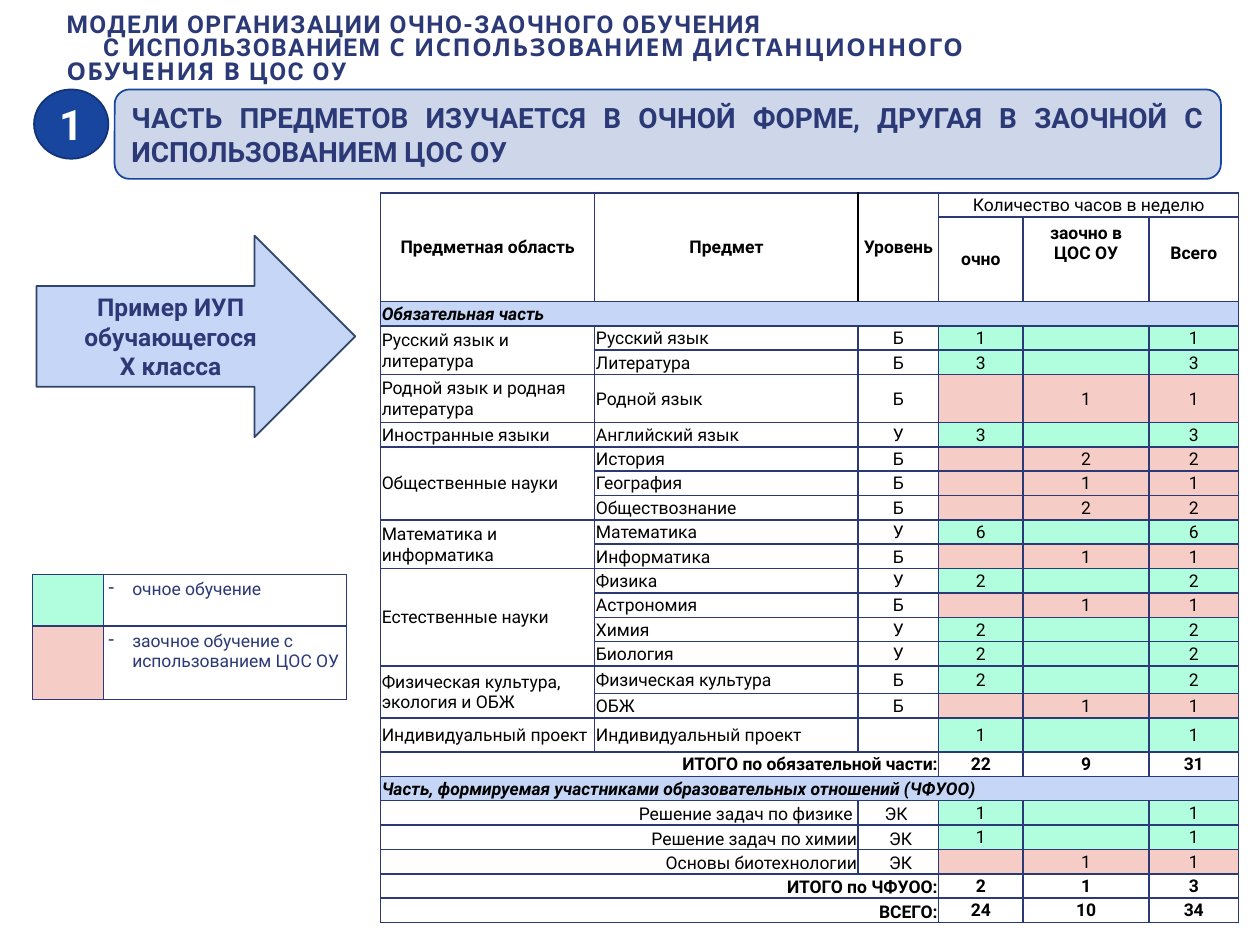
"""Build a slide with a sample curriculum for mixed full-time and distance study."""
from lxml.etree import SubElement
from pptx import Presentation
from pptx.dml.color import RGBColor
from pptx.enum.shapes import MSO_SHAPE as Shape
from pptx.enum.text import MSO_ANCHOR as Anchor, PP_ALIGN as Align
from pptx.oxml.ns import qn
from pptx.util import Inches, Pt

HUES = {"ink": "2B3977", "black": "000000", "white": "FFFFFF", "blue": "18459E",
        "edge": "123375", "pale": "CED7E9", "sky": "C6D6F6", "slate": "30446B",
        "full": "B0FEDE", "dist": "F6CDC6"}
LEFT, MID, RIGHT = Align.LEFT, Align.CENTER, Align.RIGHT

TITLE = [
    (0, [("МОДЕЛИ ОРГАНИЗАЦИИ ОЧНО-ЗАОЧНОГО ОБУЧЕНИЯ", "Roboto")]),
    (0.29, [("С ИСПОЛЬЗОВАНИЕМ ", "Roboto"),
            ("С ИСПОЛЬЗОВАНИЕМ ДИСТАНЦИОННОГО ОБУЧЕНИЯ В ", "Open Sans"),
            ("ЦОС ОУ", "Roboto")]),
]
BANNER = "ЧАСТЬ ПРЕДМЕТОВ ИЗУЧАЕТСЯ В ОЧНОЙ ФОРМЕ, ДРУГАЯ В ЗАОЧНОЙ С ИСПОЛЬЗОВАНИЕМ ЦОС ОУ"
ARROW = ["Пример ИУП обучающегося", "Х класса"]
LEGEND = [("full", "очное обучение"), ("dist", "заочное обучение с использованием ЦОС ОУ")]
HEADS = ["Предметная область", "Предмет", "Уровень"]
HOURS = "Количество часов в неделю"
MODES = ["очно", "заочно в ЦОС ОУ", "Всего"]
CORE = "Обязательная часть"
AREAS = [
    ("Русский язык и литература",
     [("Русский язык", "Б", "full", 1), ("Литература", "Б", "full", 3)]),
    ("Родной язык и родная литература", [("Родной язык", "Б", "dist", 1)]),
    ("Иностранные языки", [("Английский язык", "У", "full", 3)]),
    ("Общественные науки",
     [("История", "Б", "dist", 2), ("География", "Б", "dist", 1),
      ("Обществознание", "Б", "dist", 2)]),
    ("Математика и информатика",
     [("Математика", "У", "full", 6), ("Информатика", "Б", "dist", 1)]),
    ("Естественные науки",
     [("Физика", "У", "full", 2), ("Астрономия", "Б", "dist", 1),
      ("Химия", "У", "full", 2), ("Биология", "У", "full", 2)]),
    ("Физическая культура, экология и ОБЖ",
     [("Физическая культура", "Б", "full", 2), ("ОБЖ", "Б", "dist", 1)]),
    ("Индивидуальный проект", [("Индивидуальный проект", "", "full", 1)]),
]
CORE_SUM = ("ИТОГО по обязательной части:", [22, 9, 31])
EXTRA = "Часть, формируемая участниками образовательных отношений (ЧФУОО)"
COURSES = [("Решение задач по физике ", "ЭК ", "full", 1),
           ("Решение задач по химии", " ЭК", "full", 1),
           ("Основы биотехнологии", " ЭК", "dist", 1)]
SUMS = [("ИТОГО по ЧФУОО:", [2, 1, 3]), ("ВСЕГО:", [24, 10, 34])]
COLS = [1.7, 2.09, 0.64, 0.67, 1, 0.71]
TALL = {1: 0.67, 5: 0.38, 16: 0.22, 18: 0.27}
COUNT, HIGH = 26, 5.8


def color(name):
    return RGBColor.from_string(HUES[name])


def write(para, text, size, hue="ink", bold=False, font="Roboto", italic=False):
    run = para.add_run()
    run.text = text
    face = run.font
    face.name, face.size, face.bold, face.italic = font, Pt(size), bold, italic
    face.color.rgb = color(hue)
    return run


def add_box(host, kind, box, fill, line, texts, size, hue="ink", align=MID):
    shape = host.add_shape(kind, *map(Inches, box))
    shape.shadow.inherit = False
    shape.fill.solid()
    shape.fill.fore_color.rgb = color(fill)
    shape.line.color.rgb = color(line)
    shape.line.width = Pt(1)
    frame = shape.text_frame
    frame.word_wrap = True
    frame.vertical_anchor = Anchor.MIDDLE
    for i, text in enumerate(texts):
        para = frame.add_paragraph() if i else frame.paragraphs[0]
        para.alignment = align
        write(para, text, size, hue, True)


def edge(cell, side, hue):
    line = SubElement(cell._tc.get_or_add_tcPr(), qn("a:ln" + side), w="12700")
    fill = SubElement(line, qn("a:solidFill"))
    SubElement(fill, qn("a:srgbClr"), val=HUES[hue])


def add_grid(slide, box, cols, rows):
    table = slide.shapes.add_table(len(rows), len(cols), *map(Inches, box)).table
    table.first_row = table.horz_banding = False
    for col, wide in zip(table.columns, cols):
        col.width = Inches(wide)
    for row, high in zip(table.rows, rows):
        row.height = Inches(high)
    return table


def style(cell, pads, dark=""):
    for side in "LRTB":
        edge(cell, side, "black" if side == dark else "ink")
    cell.fill.background()
    cell.margin_left, cell.margin_right, cell.margin_top, cell.margin_bottom = map(Inches, pads)
    SubElement(cell.text_frame.paragraphs[0]._p, qn("a:endParaRPr"), sz="1000")


def paint(cell, hue):
    cell.fill.solid()
    cell.fill.fore_color.rgb = color(hue)


def put(cell, text, align=MID, bold=False, italic=False, anchor=Anchor.MIDDLE):
    cell.vertical_anchor = anchor
    para = cell.text_frame.paragraphs[0]
    para.alignment = align
    if text != "":
        write(para, str(text), 10, "black", bold, italic=italic)


def add_title(slide):
    frame = slide.shapes.add_textbox(*map(Inches, (0.43, 0, 7.39, 0.79))).text_frame
    frame.word_wrap = True
    frame.vertical_anchor = Anchor.MIDDLE
    for i, (indent, runs) in enumerate(TITLE):
        para = frame.add_paragraph() if i else frame.paragraphs[0]
        para.line_spacing = 0.8
        para._p.get_or_add_pPr().set("indent", str(Inches(indent)))
        for text, font in runs:
            write(para, text, 14, "ink", True, font)._r.get_or_add_rPr().set("spc", "80")


def add_legend(slide):
    table = add_grid(slide, (0.26, 4.56, 2.49, 0.99), [0.56, 1.93], [0.41, 0.58])
    for r, (hue, text) in enumerate(LEGEND):
        for cell in table.rows[r].cells:
            style(cell, [0.04] * 4)
        paint(table.cell(r, 0), hue)
        para = table.cell(r, 1).text_frame.paragraphs[0]
        props = para._p.get_or_add_pPr()
        props.set("marL", str(Inches(0.19)))
        props.set("indent", str(-Inches(0.19)))
        SubElement(SubElement(props, qn("a:buClr")), qn("a:srgbClr"), val=HUES["ink"])
        SubElement(props, qn("a:buChar"), char="-")
        write(para, text, 10)


def add_plan(slide):
    low = (HIGH - sum(TALL.values())) / (COUNT - len(TALL))
    rows = [TALL.get(r, low) for r in range(COUNT)]
    table = add_grid(slide, (3.02, 1.53, sum(COLS), HIGH), COLS, rows)
    at = table.cell
    for r in range(COUNT):
        for c in range(len(COLS)):
            style(at(r, c), (0.01, 0.01, 0.01, 0), {1: "R", 2: "L"}.get(c, "") if r < 2 else "")

    def band(r, text):
        at(r, 0).merge(at(r, 5))
        paint(at(r, 0), "sky")
        put(at(r, 0), text, LEFT, True, True)

    def load(r, level, mode, hours, anchor=Anchor.MIDDLE):
        put(at(r, 2), level, anchor=anchor)
        for c, value in zip((3, 4, 5), (hours if mode == "full" else "",
                                        hours if mode == "dist" else "", hours)):
            paint(at(r, c), mode)
            put(at(r, c), value)

    def total(r, text, values, anchor):
        at(r, 0).merge(at(r, 2))
        put(at(r, 0), text, RIGHT, True, anchor=anchor)
        for c, value in enumerate(values, 3):
            put(at(r, c), value, bold=True)

    for c, text in enumerate(HEADS):
        at(0, c).merge(at(1, c))
        put(at(0, c), text, bold=True)
    at(0, 3).merge(at(0, 5))
    put(at(0, 3), HOURS)
    for c, text in enumerate(MODES, 3):
        put(at(1, c), text, bold=True, anchor=Anchor.MIDDLE if c == 3 else Anchor.TOP)
    for c, top in ((4, 0.05), (5, 0.21)):
        at(1, c).margin_left = at(1, c).margin_right = Inches(0.1)
        at(1, c).margin_top = Inches(top)

    band(2, CORE)
    r = 3
    for area, items in AREAS:
        if len(items) > 1:
            at(r, 0).merge(at(r + len(items) - 1, 0))
        put(at(r, 0), area, LEFT)
        for name, *rest in items:
            put(at(r, 1), name, LEFT)
            load(r, *rest)
            r += 1
    total(r, *CORE_SUM, Anchor.MIDDLE)
    band(r + 1, EXTRA)
    for r, (name, *rest) in enumerate(COURSES, r + 2):
        at(r, 0).merge(at(r, 1))
        put(at(r, 0), name, RIGHT, anchor=Anchor.BOTTOM)
        load(r, *rest, Anchor.BOTTOM)
    for r, (text, values) in enumerate(SUMS, r + 1):
        total(r, text, values, Anchor.BOTTOM)


def main():
    deck = Presentation()
    deck.slide_width, deck.slide_height = Inches(10), Inches(7.5)
    slide = deck.slides.add_slide(deck.slide_layouts[6])
    add_title(slide)
    group = slide.shapes.add_group_shape().shapes
    add_box(group, Shape.OVAL, (0.27, 0.71, 0.59, 0.55), "blue", "edge", ["1"], 24, "white")
    add_box(group, Shape.ROUNDED_RECTANGLE, (0.91, 0.71, 8.78, 0.71), "pale", "blue",
            [BANNER], 16, align=Align.JUSTIFY)
    add_legend(slide)
    add_plan(slide)
    add_box(slide.shapes, Shape.RIGHT_ARROW, (0.29, 1.87, 2.53, 1.6), "sky", "slate", ARROW, 14)
    deck.save("out.pptx")


if __name__ == "__main__":
    main()
